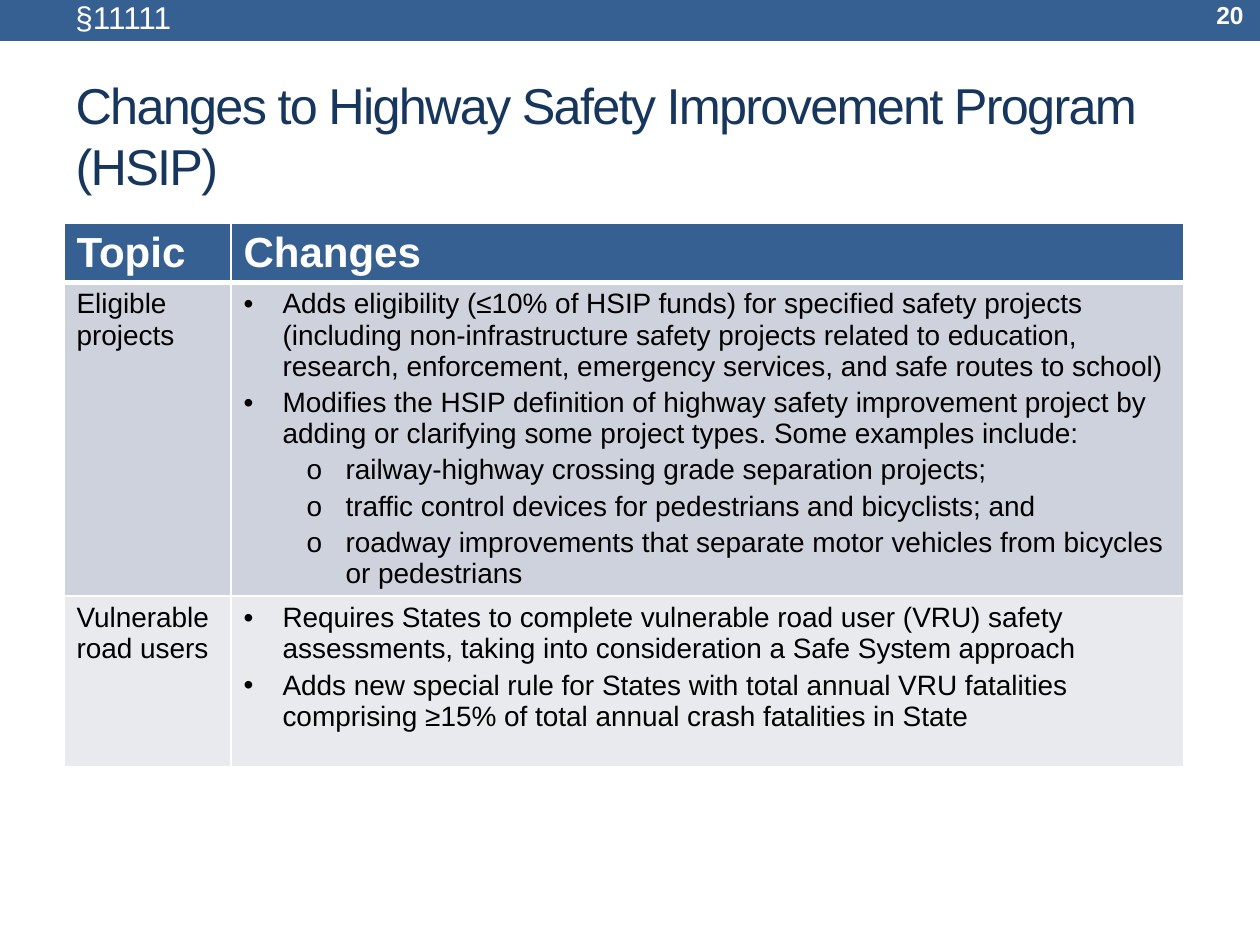
import pptx
import pptx.dml.color
import pptx.enum.shapes
import pptx.enum.text
import pptx.oxml
import pptx.oxml.ns
import pptx.util
from lxml import etree

RGB = pptx.dml.color.RGBColor
BLUE = RGB(0x36, 0x60, 0x92)
NAVY = RGB(0x17, 0x36, 0x5D)
WHITE = RGB(0xFF, 0xFF, 0xFF)
BLACK = RGB(0x00, 0x00, 0x00)
BANDS = [RGB(0xCE, 0xD2, 0xDC), RGB(0xE8, 0xEA, 0xEE)]

PX_PER_INCH = 126
ANCHOR = pptx.enum.text.MSO_ANCHOR
ALIGN = pptx.enum.text.PP_ALIGN

# Each change is (outline level, wording).
TOPICS = [
    ("Eligible projects", [
        (0, "Adds eligibility (≤10% of HSIP funds) for specified safety projects "
            "(including non-infrastructure safety projects related to education, "
            "research, enforcement, emergency services, and safe routes to school)"),
        (0, "Modifies the HSIP definition of highway safety improvement project by "
            "adding or clarifying some project types. Some examples include:"),
        (1, "railway-highway crossing grade separation projects;"),
        (1, "traffic control devices for pedestrians and bicyclists; and"),
        (1, "roadway improvements that separate motor vehicles from bicycles "
            "or pedestrians"),
    ]),
    ("Vulnerable road users", [
        (0, "Requires States to complete vulnerable road user (VRU) safety "
            "assessments, taking into consideration a Safe System approach"),
        (0, "Adds new special rule for States with total annual VRU fatalities "
            "comprising ≥15% of total annual crash fatalities in State"),
    ]),
]


def px(length):
    return pptx.util.Emu(round(length * 914400 / PX_PER_INCH))


def write(paragraph, text, size=16, color=BLACK, bold=False, align=ALIGN.LEFT,
          tracking=0, font="Arial"):
    """Add text as one run; tracking is in hundredths of a point."""
    paragraph.alignment = align
    run = paragraph.add_run()
    run.text = text
    run.font.name = font
    run.font.size = pptx.util.Pt(size)
    run.font.bold = bold
    run.font.color.rgb = color
    if tracking:
        run.font._element.set("spc", str(tracking))


def set_bullet(paragraph, level):
    paragraph.level = level
    paragraph.space_after = pptx.util.Pt(3)
    properties = paragraph._p.get_or_add_pPr()
    properties.set("marL", str(px(39 + 63 * level)))
    properties.set("indent", str(px(-39)))
    bullet_font = etree.SubElement(properties, pptx.oxml.ns.qn("a:buFont"))
    bullet_font.set("typeface", "Arial")
    bullet = etree.SubElement(properties, pptx.oxml.ns.qn("a:buChar"))
    bullet.set("char", "•o"[level])


def set_borders(cell, bottom=1):
    """Draw white cell borders of 1 pt, with the bottom one as given."""
    properties = cell._tc.get_or_add_tcPr()
    widths = {"lnL": 1, "lnR": 1, "lnT": 1, "lnB": bottom}
    for position, (side, width) in enumerate(widths.items()):
        properties.insert(position, pptx.oxml.parse_xml(
            f'<a:{side} {pptx.oxml.ns.nsdecls("a")} w="{pptx.util.Pt(width)}">'
            f'<a:solidFill><a:srgbClr val="{WHITE}"/></a:solidFill></a:{side}>'))


class SlideBuilder:
    """Holds the slide and draws its elements, with lengths in px."""

    def __init__(self, presentation):
        self.slide = presentation.slides.add_slide(presentation.slide_layouts[5])

    def bar(self, left, top, width, height):
        bar = self.slide.shapes.add_shape(
            pptx.enum.shapes.MSO_SHAPE.RECTANGLE, *map(px, (left, top, width, height)))
        bar.shadow.inherit = False
        bar.fill.solid()
        bar.fill.fore_color.rgb = BLUE
        bar.line.fill.background()

    def title(self, text, left, top, width, height):
        title = self.slide.shapes.title
        title.left, title.top, title.width, title.height = map(
            px, (left, top, width, height))
        title.text_frame.vertical_anchor = ANCHOR.MIDDLE
        write(title.text_frame.paragraphs[0], text, size=28.8, color=NAVY, tracking=-100)

    def label(self, text, left, top, width, height, anchor=ANCHOR.TOP, **style):
        box = self.slide.shapes.add_textbox(*map(px, (left, top, width, height)))
        box.text_frame.word_wrap = True
        box.text_frame.vertical_anchor = anchor
        write(box.text_frame.paragraphs[0], text, color=WHITE, **style)

    def table(self, headings, topics, left, top, columns, rows):
        table = self.slide.shapes.add_table(
            len(rows), len(columns), px(left), px(top),
            px(sum(columns)), px(sum(rows))).table
        for column, width in zip(table.columns, columns):
            column.width = px(width)
        for row, height in zip(table.rows, rows):
            row.height = px(height)
        for index, heading in enumerate(headings):
            cell = self.cell(table, 0, index, BLUE, bottom=3)
            write(cell.text_frame.paragraphs[0], heading, size=24, color=WHITE, bold=True)
        for row, (topic, changes) in enumerate(topics, start=1):
            band = BANDS[(row - 1) % len(BANDS)]
            topic_cell = self.cell(table, row, 0, band)
            write(topic_cell.text_frame.paragraphs[0], topic)
            frame = self.cell(table, row, 1, band).text_frame
            for index, (level, change) in enumerate(changes):
                paragraph = frame.add_paragraph() if index else frame.paragraphs[0]
                set_bullet(paragraph, level)
                write(paragraph, change)

    def cell(self, table, row, column, fill, bottom=1):
        cell = table.cell(row, column)
        cell.margin_right = 0
        cell.fill.solid()
        cell.fill.fore_color.rgb = fill
        set_borders(cell, bottom)
        return cell


def main():
    presentation = pptx.Presentation()
    presentation.slide_width = px(1260)
    presentation.slide_height = px(945)
    builder = SlideBuilder(presentation)
    builder.bar(0, -9, 1260, 50)
    builder.title("Changes to Highway Safety Improvement Program (HSIP)",
                  63, 67, 1134, 136)
    builder.table(["Topic", "Changes"], TOPICS, 64, 223,
                  columns=[167, 953], rows=[59, 313, 171])
    builder.label("§11111", 63, -8, 1051, 50, size=18)
    builder.label("20", 1109, -8, 147, 45, anchor=ANCHOR.MIDDLE,
                  size=14, bold=True, align=ALIGN.RIGHT)
    presentation.save("out.pptx")


if __name__ == "__main__":
    main()
